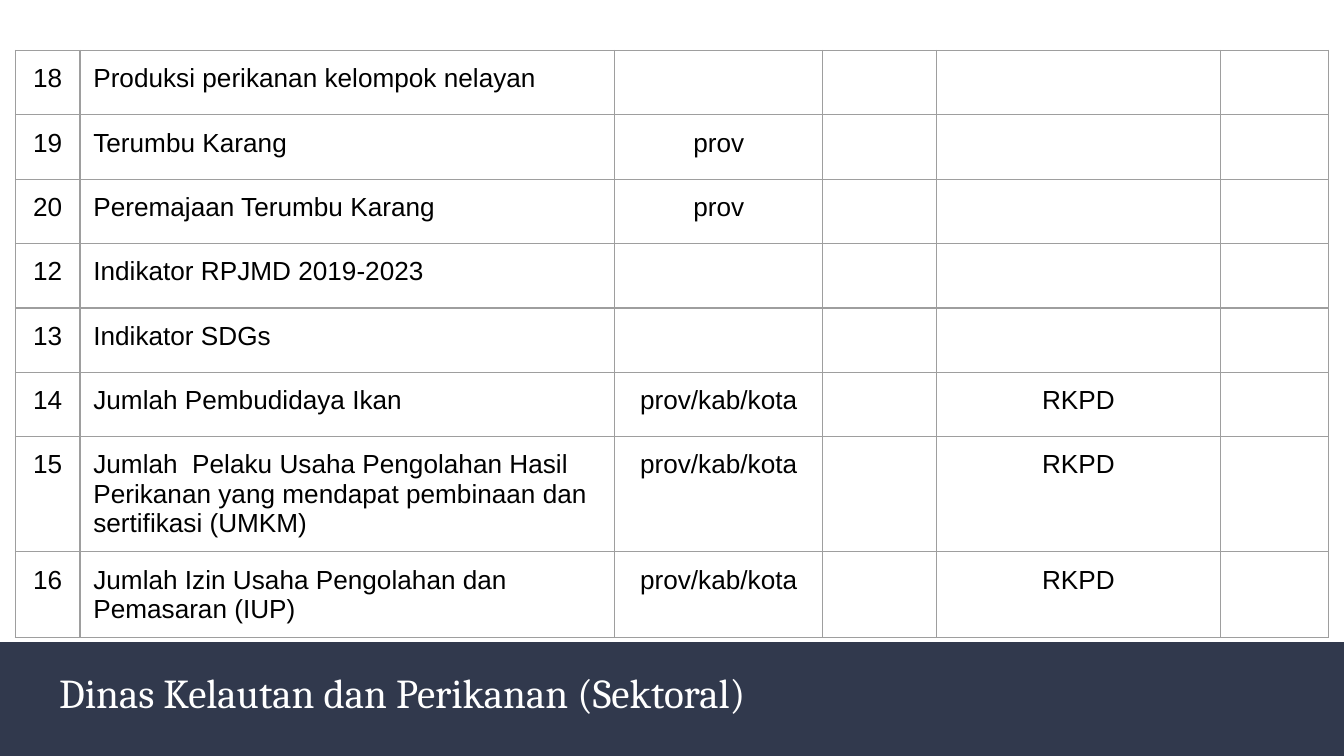
from dataclasses import dataclass

from pptx import Presentation
from pptx.dml.color import RGBColor
from pptx.enum.shapes import MSO_SHAPE as Preset
from pptx.enum.text import MSO_ANCHOR as Anchor, MSO_AUTO_SIZE as AutoSize, PP_ALIGN as Align
from pptx.oxml import parse_xml
from pptx.oxml.ns import nsdecls
from pptx.util import Pt


@dataclass(frozen=True)
class Theme:
    band: str = "31394D"
    heading: str = "FFFFFF"
    ink: str = "000000"
    grid: str = "9E9E9E"
    grid_width: float = 0.75
    heading_font: str = "Cambria"
    body_font: str = "Arial"
    heading_size: float = 22
    body_size: float = 14
    inset: float = 7.2


THEME = Theme()
SLIDE_WIDTH, SLIDE_HEIGHT = 720, 405
BAND_TOP = 344

# Number, indicator, authority, (blank), planning document, (blank)
COLUMN_WIDTHS = [34.5, 286.5, 111.5, 61, 152, 58]
REGIONS = "prov/kab/kota"
INDICATORS = [
    ("18", "Produksi perikanan kelompok nelayan", "", ""),
    ("19", "Terumbu Karang", "prov", ""),
    ("20", "Peremajaan Terumbu Karang", "prov", ""),
    ("12", "Indikator RPJMD 2019-2023", "", ""),
    ("13", "Indikator SDGs", "", ""),
    ("14", "Jumlah Pembudidaya Ikan", REGIONS, "RKPD"),
    ("15", "Jumlah  Pelaku Usaha Pengolahan Hasil Perikanan yang mendapat "
           "pembinaan dan sertifikasi (UMKM)", REGIONS, "RKPD"),
    ("16", "Jumlah Izin Usaha Pengolahan dan Pemasaran (IUP)", REGIONS, "RKPD"),
]
ROW_HEIGHTS = [34.5] * 6 + [61.5, 46]


def add_run(paragraph, text, font_name, size, color):
    run = paragraph.add_run()
    run.text = text
    run.font.name = font_name
    run.font.size = Pt(size)
    run.font.color.rgb = RGBColor.from_string(color)


def set_insets(owner):
    owner.margin_left = owner.margin_right = Pt(THEME.inset)
    owner.margin_top = owner.margin_bottom = Pt(THEME.inset)


def add_band(slide):
    band = slide.shapes.add_shape(
        Preset.RECTANGLE, 0, Pt(BAND_TOP), Pt(SLIDE_WIDTH), Pt(SLIDE_HEIGHT - BAND_TOP))
    band.shadow.inherit = False
    band.fill.solid()
    band.fill.fore_color.rgb = RGBColor.from_string(THEME.band)
    band.line.fill.background()
    # Send the band behind the heading
    slide.shapes._spTree.insert(2, band._element)


def fill_heading(slide, text):
    heading = slide.shapes.title
    heading.left, heading.top = Pt(24.5), Pt(355.5)
    heading.width, heading.height = Pt(628.5), Pt(36)
    frame = heading.text_frame
    frame.auto_size = AutoSize.NONE
    frame.word_wrap = True
    frame.vertical_anchor = Anchor.MIDDLE
    set_insets(frame)
    paragraph = frame.paragraphs[0]
    paragraph.alignment = Align.LEFT
    paragraph.line_spacing = 0.8
    add_run(paragraph, text, THEME.heading_font, THEME.heading_size, THEME.heading)


def draw_borders(cell):
    properties = cell._tc.get_or_add_tcPr()
    for position, side in enumerate(("lnL", "lnR", "lnT", "lnB")):
        properties.insert(position, parse_xml(
            f'<a:{side} {nsdecls("a")} w="{Pt(THEME.grid_width)}"><a:solidFill>'
            f'<a:srgbClr val="{THEME.grid}"/></a:solidFill></a:{side}>'))


def fill_cell(cell, text, alignment):
    cell.fill.background()
    draw_borders(cell)
    if text:
        set_insets(cell)
        paragraph = cell.text_frame.paragraphs[0]
        paragraph.alignment = alignment
        add_run(paragraph, text, THEME.body_font, THEME.body_size, THEME.ink)


def add_indicator_table(slide):
    table = slide.shapes.add_table(
        len(INDICATORS), len(COLUMN_WIDTHS), Pt(8.3), Pt(27),
        Pt(sum(COLUMN_WIDTHS)), Pt(sum(ROW_HEIGHTS))).table
    table.first_row = table.horz_banding = False
    for column, width in zip(table.columns, COLUMN_WIDTHS):
        column.width = Pt(width)
    for row, height, indicator in zip(table.rows, ROW_HEIGHTS, INDICATORS):
        row.height = Pt(height)
        number, name, authority, document = indicator
        entries = (number, name, authority, "", document, "")
        for index, (cell, entry) in enumerate(zip(row.cells, entries)):
            fill_cell(cell, entry, Align.LEFT if index == 1 else Align.CENTER)


def main():
    deck = Presentation()
    deck.slide_width, deck.slide_height = Pt(SLIDE_WIDTH), Pt(SLIDE_HEIGHT)
    slide = deck.slides.add_slide(deck.slide_layouts[5])

    # Heading on the bottom band
    add_band(slide)
    fill_heading(slide, "Dinas Kelautan dan Perikanan (Sektoral)")

    # Indicator list
    add_indicator_table(slide)
    deck.save("out.pptx")


if __name__ == "__main__":
    main()
